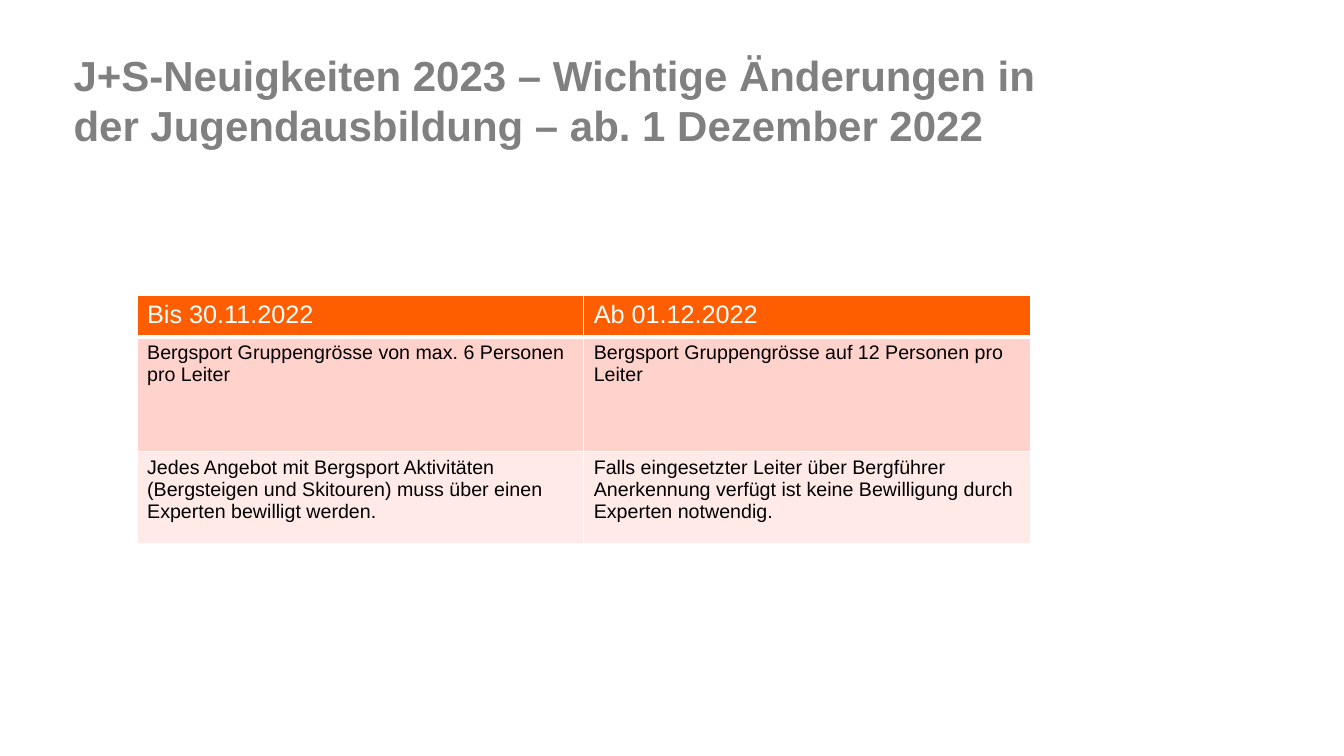
from lxml.etree import SubElement
from pptx import Presentation
from pptx.dml.color import RGBColor
from pptx.enum.text import MSO_ANCHOR, MSO_AUTO_SIZE, PP_ALIGN
from pptx.oxml.ns import qn
from pptx.util import Inches, Pt


def color(value):
    return RGBColor.from_string(value)


def add_border(cell, side, width):
    line = SubElement(cell._tc.get_or_add_tcPr(), qn(f"a:ln{side}"), w=str(Pt(width)))
    fill = SubElement(line, qn("a:solidFill"))
    SubElement(fill, qn("a:srgbClr"), val="FFFFFF")


deck = Presentation()
deck.slide_width, deck.slide_height = Inches(13.33), Inches(7.5)
page = deck.slides.add_slide(deck.slide_layouts[5])

# Title
title = page.shapes.title
title.left, title.top = Inches(0.73), Inches(0.44)
title.width, title.height = Inches(10.12), Inches(0.39)
frame = title.text_frame
frame.margin_left = frame.margin_right = frame.margin_bottom = 0
frame.margin_top = Inches(0.05)
frame.word_wrap = True
frame.auto_size = MSO_AUTO_SIZE.NONE
frame.vertical_anchor = MSO_ANCHOR.TOP
frame.text = "J+S-Neuigkeiten 2023 – Wichtige Änderungen in der Jugendausbildung – ab. 1 Dezember 2022"
para = frame.paragraphs[0]
para.alignment = PP_ALIGN.LEFT
para.font.name, para.font.size, para.font.bold = "Arial", Pt(30), True
para.font.color.rgb = color("808080")

# Comparison table: height, fill, text color, text size, texts
rows = [
    (0.41, "FF5E00", "FFFFFF", 18, ["Bis 30.11.2022", "Ab 01.12.2022"]),
    (1.14, "FFD2CC", "000000", 14, [
        "Bergsport Gruppengrösse von max. 6 Personen pro Leiter",
        "Bergsport Gruppengrösse auf 12 Personen pro Leiter"]),
    (0.91, "FFEAE7", "000000", 14, [
        "Jedes Angebot mit Bergsport Aktivitäten (Bergsteigen und Skitouren) "
        "muss über einen Experten bewilligt werden.",
        "Falls eingesetzter Leiter über Bergführer Anerkennung verfügt ist "
        "keine Bewilligung durch Experten notwendig."]),
]
table = page.shapes.add_table(
    len(rows), 2, Inches(1.36), Inches(2.93), Inches(8.86), Inches(2.46)).table

for row, (height, fill, text_color, size, texts) in enumerate(rows):
    table.rows[row].height = Inches(height)
    for column, text in enumerate(texts):
        cell = table.cell(row, column)
        for side in "LRTB":
            add_border(cell, side, 3 if row == 0 and side == "B" else 1)
        cell.fill.solid()
        cell.fill.fore_color.rgb = color(fill)
        cell.text = text
        font = cell.text_frame.paragraphs[0].font
        font.name, font.size, font.bold = "Arial", Pt(size), False
        font.color.rgb = color(text_color)

deck.save("out.pptx")
